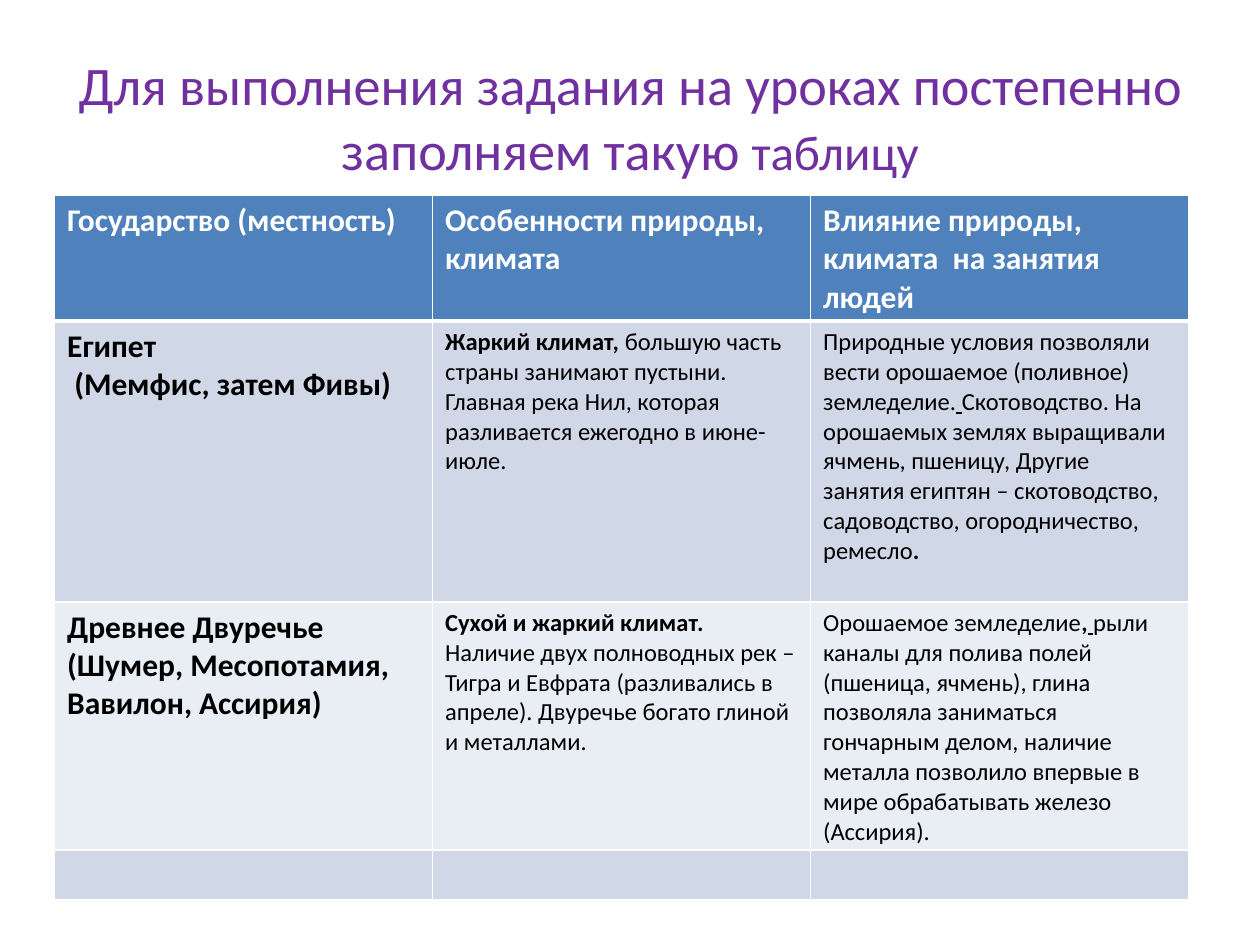
from typing import NamedTuple

from lxml.etree import SubElement as Sub
from pptx import Presentation as Deck
from pptx.dml.color import RGBColor as Rgb
from pptx.enum.text import MSO_ANCHOR as Anchor, PP_ALIGN as Align
from pptx.oxml.ns import qn
from pptx.util import Cm, Pt

FONT = "Calibri"
HUES = {
    "title": "7030A0",
    "head": "4F81BD",
    "dark": "D0D8E8",
    "light": "E9EDF4",
    "white": "FFFFFF",
    "black": "000000",
}


class Span(NamedTuple):
    text: str
    size: float = 14
    bold: bool = False
    line: bool = False


class Row(NamedTuple):
    high: float
    fill: str
    ink: str
    cells: list[list[list[Span]]]


def big(text: str) -> list[Span]:
    return [Span(text, 18, True)]


ROWS = [
    Row(1.93, "head", "white", [
        [big("Государство (местность)")],
        [big("Особенности природы, климата")],
        [big("Влияние природы, климата  на занятия людей")],
    ]),
    Row(5.66, "dark", "black", [
        [big("Египет"), big(" (Мемфис, затем Фивы)")],
        [[Span("Жаркий климат,", bold=True),
          Span(" большую часть страны занимают пустыни. Главная река Нил, "
               "которая разливается ежегодно в июне-июле.")]],
        [[Span("Природные условия позволяли вести орошаемое (поливное) "
               "земледелие."),
          Span(" ", bold=True, line=True),
          Span("Скотоводство. На орошаемых землях выращивали ячмень, "
               "пшеницу, Другие занятия египтян – скотоводство, "
               "садоводство, огородничество, ремесло"),
          Span(".", bold=True)]],
    ]),
    Row(4.55, "light", "black", [
        [big("Древнее Двуречье"),
         big("(Шумер, Месопотамия, Вавилон, Ассирия)")],
        [[Span("Сухой и жаркий климат.", bold=True),
          Span(" Наличие двух полноводных рек – Тигра и Евфрата "
               "(разливались в апреле). Двуречье богато глиной и "
               "металлами.")]],
        [[Span("Орошаемое земледелие"),
          Span(",", bold=True),
          Span(" ", line=True),
          Span("рыли каналы для полива полей (пшеница, ячмень), глина "
               "позволяла заниматься гончарным делом, наличие металла "
               "позволило впервые в мире обрабатывать железо "
               "(Ассирия).")]],
    ]),
    Row(0.94, "dark", "black", [[], [], []]),
]


def write(para, spans: list[Span], ink: str) -> None:
    for span in spans:
        run = para.add_run()
        run.text = span.text
        font = run.font
        font.name, font.size = FONT, Pt(span.size)
        font.bold, font.underline = span.bold, span.line
        font.color.rgb = Rgb.from_string(HUES[ink])


def edge(cell, base: float) -> None:
    """Draw white borders; base is the width of the bottom one in points."""
    props = cell._tc.get_or_add_tcPr()
    sides = {"lnL": 1, "lnR": 1, "lnT": 1, "lnB": base}
    for spot, (side, width) in enumerate(sides.items()):
        line = Sub(props, qn(f"a:{side}"), w=str(Pt(width)))
        fill = Sub(line, qn("a:solidFill"))
        Sub(fill, qn("a:srgbClr"), val=HUES["white"])
        props.insert(spot, line)


def fill_cell(cell, row: Row, paras: list[list[Span]]) -> None:
    cell.fill.solid()
    cell.fill.fore_color.rgb = Rgb.from_string(HUES[row.fill])
    edge(cell, 3 if row.fill == "head" else 1)
    frame = cell.text_frame
    for num, spans in enumerate(paras):
        para = frame.add_paragraph() if num else frame.paragraphs[0]
        write(para, spans, row.ink)


def add_title(slide) -> None:
    box = slide.shapes.add_textbox(Cm(1.27), Cm(0.76), Cm(22.86), Cm(3.18))
    frame = box.text_frame
    frame.word_wrap = True
    frame.vertical_anchor = Anchor.MIDDLE
    para = frame.paragraphs[0]
    para.alignment = Align.CENTER
    write(para, [
        Span("Для выполнения задания на уроках постепенно заполняем такую ", 31),
        Span("таблицу", 28),
    ], "title")


def add_grid(slide) -> None:
    high = sum(row.high for row in ROWS)
    grid = slide.shapes.add_table(
        len(ROWS), 3, Cm(1.1), Cm(3.93), Cm(22.86), Cm(high)).table
    for col in grid.columns:
        col.width = Cm(7.62)
    for num, row in enumerate(ROWS):
        grid.rows[num].height = Cm(row.high)
        for cell, paras in zip(grid.rows[num].cells, row.cells):
            fill_cell(cell, row, paras)


def main() -> None:
    deck = Deck()
    deck.slide_width, deck.slide_height = Cm(25.4), Cm(19.05)
    slide = deck.slides.add_slide(deck.slide_layouts[6])
    add_title(slide)
    add_grid(slide)
    deck.save("out.pptx")


if __name__ == "__main__":
    main()
